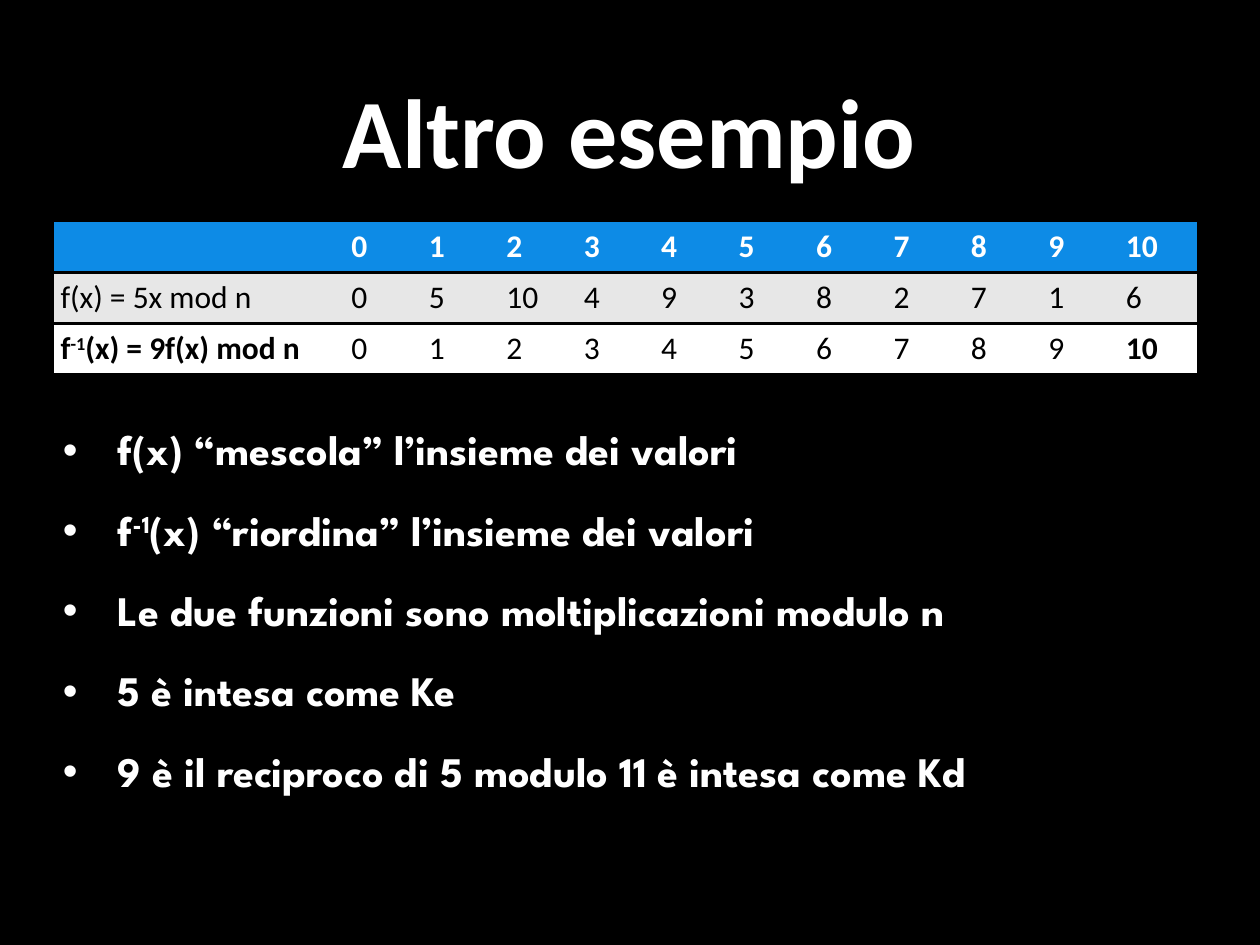
from lxml import etree
from pptx import Presentation
from pptx.dml.color import RGBColor
from pptx.enum import text
from pptx.oxml.ns import qn
from pptx.util import Pt

BLACK = RGBColor(0, 0, 0)
WHITE = RGBColor(255, 255, 255)
BLUE = RGBColor(0x0D, 0x8B, 0xE6)
GREY = RGBColor(0xE7, 0xE7, 0xE7)


def add_runs(p, parts, font, size, color, bold):
    """Write the parts as runs; every second part is superscript."""
    for i, part in enumerate(parts):
        r = p.add_run()
        r.text = part
        r.font.name, r.font.size, r.font.bold = font, Pt(size), bold
        r.font.color.rgb = color
        if i % 2:
            r.font._element.set("baseline", "30000")


def add_border(cell, side):
    ln = etree.Element(qn("a:" + side), w=str(Pt(2)))
    fill = etree.SubElement(ln, qn("a:solidFill"))
    etree.SubElement(fill, qn("a:srgbClr"), val=str(BLACK))
    tcPr = cell._tc.get_or_add_tcPr()
    tcPr.insert(len(tcPr.findall(qn("a:lnT"))), ln)


prs = Presentation()
prs.slide_width, prs.slide_height = Pt(720), Pt(540)
s = prs.slides.add_slide(prs.slide_layouts[6])
s.background.fill.solid()
s.background.fill.fore_color.rgb = BLACK

# Title
tf = s.shapes.add_textbox(Pt(61.2), Pt(8.6), Pt(597), Pt(130.3)).text_frame
tf.word_wrap = True
tf.vertical_anchor = text.MSO_ANCHOR.MIDDLE
p = tf.paragraphs[0]
p.alignment = text.PP_ALIGN.CENTER
add_runs(p, ["Altro esempio"], "Calibri", 56, WHITE, True)

# Table of the function and its inverse modulo 11
n = 11
rows = [
    [[]] + [[str(x)] for x in range(n)],
    [["f(x) = 5x mod n"]] + [[str(5 * x % n)] for x in range(n)],
    [["f", "-1", "(x) = 9f(x) mod n"]] + [[str(9 * (5 * x % n) % n)] for x in range(n)],
]
styles = [(BLUE, WHITE), (GREY, BLACK), (WHITE, BLACK)]
tbl = s.shapes.add_table(3, n + 1, Pt(31), Pt(126.2), Pt(653), Pt(88)).table
tbl.first_row = tbl.horz_banding = False
# "No Style, No Grid"
tbl._tbl.tblPr.find(qn("a:tableStyleId")).text = "{2D5ABB26-0587-4C30-8999-92F81FD0307C}"
for j, col in enumerate(tbl.columns):
    col.width = Pt(44.25) if j else Pt(166.25)
for i, (row, (fill, color)) in enumerate(zip(rows, styles)):
    tbl.rows[i].height = Pt(29.3)
    for j, parts in enumerate(row):
        cell = tbl.cell(i, j)
        cell.margin_left = cell.margin_right = Pt(3.6)
        cell.margin_top = cell.margin_bottom = Pt(3.6)
        cell.fill.solid()
        cell.fill.fore_color.rgb = fill
        bold = i == 0 or (i == 2 and j in (0, n))
        add_runs(cell.text_frame.paragraphs[0], parts, "Calibri", 18, color, bold)
        if i < 2:
            add_border(cell, "lnT")
        if i != 1:
            add_border(cell, "lnB")

# Bullets
bullets = [
    ["f(x) “mescola” l’insieme dei valori"],
    ["f", "-1", "(x) “riordina” l’insieme dei valori"],
    ["Le due funzioni sono moltiplicazioni modulo n"],
    ["5 è intesa come Ke"],
    ["9 è il reciproco di 5 modulo 11 è intesa come Kd"],
]
tf = s.shapes.add_textbox(Pt(28.8), Pt(241.9), Pt(654.5), Pt(240.5)).text_frame
tf.word_wrap = True
for i, parts in enumerate(bullets):
    p = tf.add_paragraph() if i else tf.paragraphs[0]
    p.line_spacing = 0.9
    p.space_before = Pt(20 if i else 0)
    pPr = p._p.get_or_add_pPr()
    pPr.set("marL", str(Pt(31.5)))
    pPr.set("indent", str(-Pt(31.5)))
    etree.SubElement(pPr, qn("a:buFont"), typeface="Arial")
    etree.SubElement(pPr, qn("a:buChar"), char="•")
    add_runs(p, parts, "League Spartan", 24, WHITE, True)

prs.save("out.pptx")
